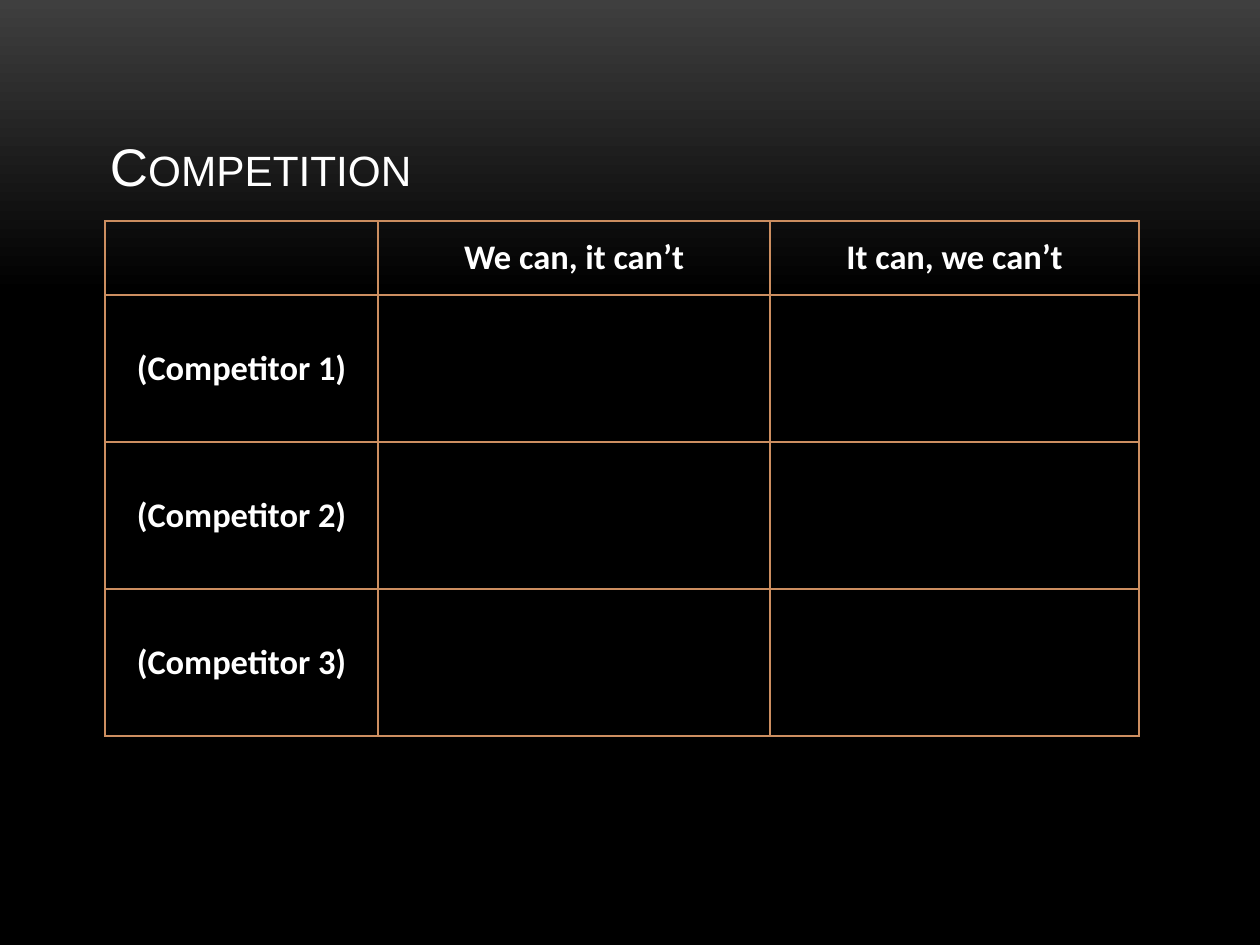
from dataclasses import dataclass

from lxml.etree import SubElement
from pptx import Presentation
from pptx.dml.color import RGBColor
from pptx.enum.text import MSO_ANCHOR as Anchor, PP_ALIGN as Align
from pptx.oxml.ns import qn
from pptx.slide import Slide
from pptx.table import _Cell as Cell
from pptx.text.text import TextFrame
from pptx.util import Emu, Pt

PX = 10320  # EMU per px
INSET = 5
WHITE, BLACK, GREY, COPPER = "FFFFFF", "000000", "3F3F3F", "CC8E60"


@dataclass(frozen=True)
class TextStyle:
    font: str
    size: int
    bold: bool
    align: Align


TITLE_STYLE = TextStyle("Arial", 43, False, Align.LEFT)
CELL_STYLE = TextStyle("Calibri", 28, True, Align.CENTER)

COLUMN_WIDTHS = (273, 392, 369)
HEADER_HEIGHT, COMPETITOR_HEIGHT = 74, 147
HEADER = ("", "We can, it can’t", "It can, we can’t")
COMPETITORS = [(f"(Competitor {number})", "", "") for number in (1, 2, 3)]


def px(length: int) -> Emu:
    return Emu(length * PX)


def color(value: str) -> RGBColor:
    return RGBColor.from_string(value)


def write(text_frame: TextFrame, text: str, style: TextStyle) -> None:
    text_frame.text = text
    paragraph = text_frame.paragraphs[0]
    paragraph.alignment = style.align
    for run in paragraph.runs:
        run.font.name = style.font
        run.font.size = Pt(style.size)
        run.font.bold = style.bold
        run.font.color.rgb = color(WHITE)


def set_margins(target: TextFrame | Cell) -> None:
    target.margin_left = target.margin_right = px(INSET)
    target.margin_top = target.margin_bottom = px(INSET)


def draw_borders(cell: Cell, widths: dict[str, int]) -> None:
    properties = cell._tc.get_or_add_tcPr()
    for position, (side, width) in enumerate(widths.items()):
        line = SubElement(properties, qn(f"a:{side}"), w=str(Pt(width)))
        fill = SubElement(line, qn("a:solidFill"))
        SubElement(fill, qn("a:srgbClr"), val=COPPER)
        properties.remove(line)
        properties.insert(position, line)  # borders precede the cell fill


def add_background(slide: Slide) -> None:
    fill = slide.background.fill
    fill.gradient()
    fill.gradient_angle = 270
    for stop, position, value in zip(fill.gradient_stops, (0, 0.31), (GREY, BLACK)):
        stop.position = position
        stop.color.rgb = color(value)


def add_title(slide: Slide, text: str) -> None:
    title = slide.shapes.title
    title.left, title.top, title.width, title.height = map(px, (105, 74, 468, 128))
    text_frame = title.text_frame
    set_margins(text_frame)
    text_frame.vertical_anchor = Anchor.BOTTOM
    write(text_frame, text, TITLE_STYLE)
    for run in text_frame.paragraphs[0].runs:
        run._r.get_or_add_rPr().set("cap", "small")


def add_competition_table(slide: Slide) -> None:
    rows = [HEADER, *COMPETITORS]
    heights = [HEADER_HEIGHT] + [COMPETITOR_HEIGHT] * len(COMPETITORS)
    table = slide.shapes.add_table(
        len(rows), len(COLUMN_WIDTHS), px(105), px(221),
        px(sum(COLUMN_WIDTHS)), px(sum(heights)),
    ).table
    table.first_row = table.horz_banding = False
    for column, width in zip(table.columns, COLUMN_WIDTHS):
        column.width = px(width)
    for row_index, (texts, height) in enumerate(zip(rows, heights)):
        table.rows[row_index].height = px(height)
        # The rule under the header is heavier
        top = 2 if row_index == 1 else 1
        bottom = 2 if row_index == 0 else 1
        for column_index, text in enumerate(texts):
            cell = table.cell(row_index, column_index)
            set_margins(cell)
            cell.vertical_anchor = Anchor.MIDDLE
            cell.fill.background()
            write(cell.text_frame, text, CELL_STYLE)
            draw_borders(cell, {"lnL": 1, "lnR": 1, "lnT": top, "lnB": bottom})


def main() -> None:
    presentation = Presentation()
    presentation.slide_width, presentation.slide_height = px(1260), px(945)
    slide = presentation.slides.add_slide(presentation.slide_layouts[5])
    add_background(slide)
    add_competition_table(slide)
    add_title(slide, "Competition")
    presentation.save("out.pptx")


if __name__ == "__main__":
    main()
